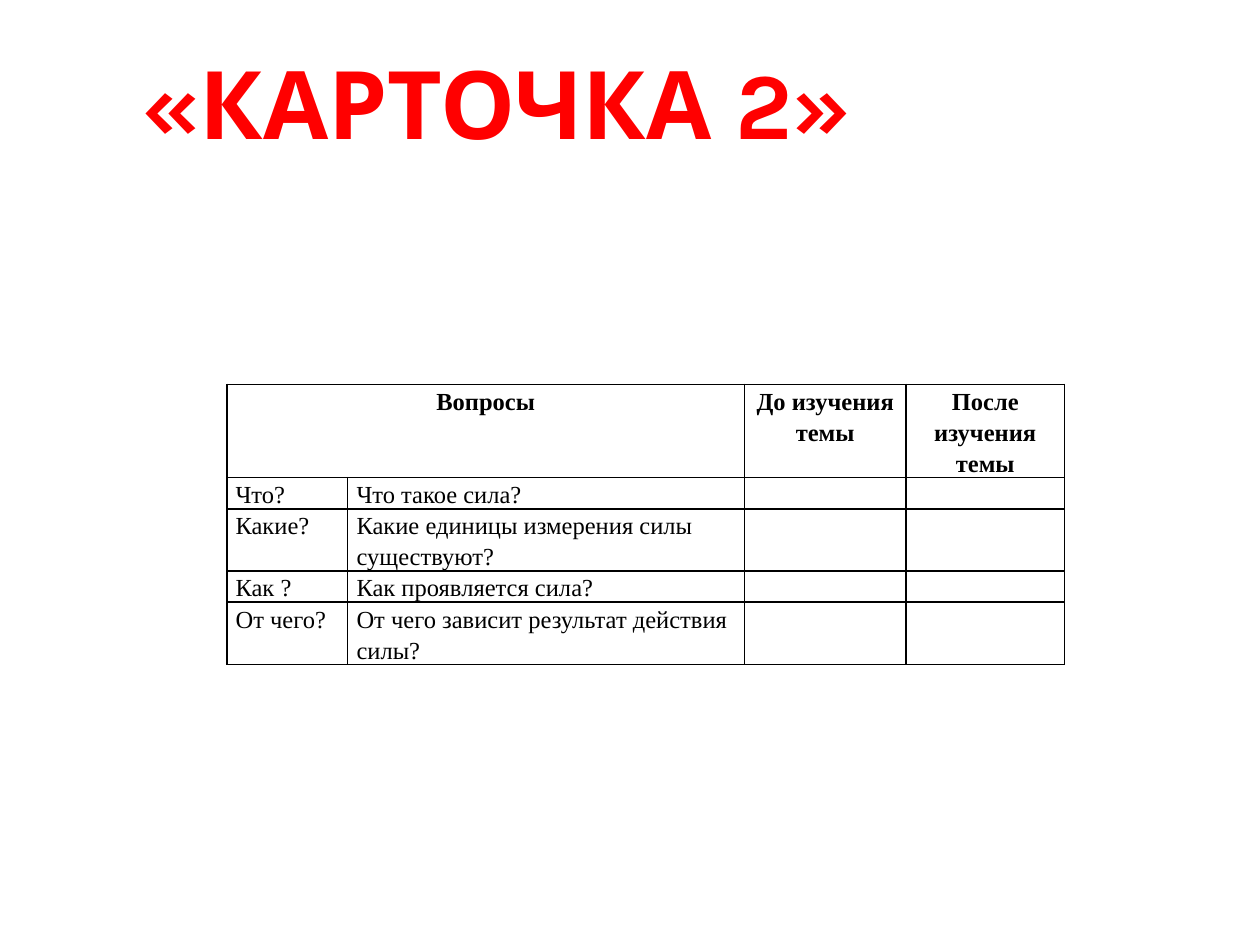
from lxml import etree
from pptx import Presentation
from pptx import util as u
from pptx.dml.color import RGBColor
from pptx.enum import text
from pptx.oxml.ns import qn

THEME = {
    "title": {"font": "Karla", "size": 54, "color": "FF0000"},
    "table": {"font": "Times New Roman", "size": 14, "color": "000000"},
    "border": {"width": 1, "color": "000000"},
}


def style(paragraph, role, bold):
    look = THEME[role]
    paragraph.font.name = look["font"]
    paragraph.font.size = u.Pt(look["size"])
    paragraph.font.bold = bold
    paragraph.font.color.rgb = RGBColor.from_string(look["color"])


def add_borders(cell):
    props = cell._tc.get_or_add_tcPr()
    for position, side in enumerate(("a:lnL", "a:lnR", "a:lnT", "a:lnB")):
        line = etree.Element(qn(side), w=str(u.Pt(THEME["border"]["width"])))
        fill = etree.SubElement(line, qn("a:solidFill"))
        etree.SubElement(fill, qn("a:srgbClr"), val=THEME["border"]["color"])
        props.insert(position, line)


prs = Presentation()
prs.slide_width, prs.slide_height = u.Inches(10), u.Inches(7.5)
slide = prs.slides.add_slide(prs.slide_layouts[5])

# Title
heading = slide.shapes.title
heading.left, heading.top = u.Inches(1.02), u.Inches(0.31)
heading.width, heading.height = u.Inches(8.59), u.Inches(1.17)
heading.text_frame.text = "«КАРТОЧКА 2»"
heading.text_frame.vertical_anchor = text.MSO_ANCHOR.TOP
heading.text_frame.paragraphs[0].alignment = text.PP_ALIGN.LEFT
style(heading.text_frame.paragraphs[0], "title", True)

# Question card: text lines per row set the row heights
questions = [
    ("Вопросы", "", "До изучения темы", "После изучения темы"),
    ("Что?", "Что такое сила?", "", ""),
    ("Какие?", "Какие единицы измерения силы существуют?", "", ""),
    ("Как ?", "Как проявляется сила?", "", ""),
    ("От чего?", "От чего зависит результат действия силы?", "", ""),
]
column_widths = [0.96, 3.15, 1.28, 1.26]
row_lines = [3, 1, 2, 1, 2]
line_height = 0.246

card = slide.shapes.add_table(
    len(questions), len(column_widths), u.Inches(1.8), u.Inches(3.05),
    u.Inches(sum(column_widths)), u.Inches(sum(row_lines) * line_height)).table
for column, width in zip(card.columns, column_widths):
    column.width = u.Inches(width)
for row, lines in zip(card.rows, row_lines):
    row.height = u.Inches(lines * line_height)
card.cell(0, 0).merge(card.cell(0, 1))

for r, entries in enumerate(questions):
    for c, entry in enumerate(entries):
        cell = card.cell(r, c)
        cell.margin_left = cell.margin_right = u.Inches(0.07)
        cell.margin_top = cell.margin_bottom = 0
        cell.fill.background()
        add_borders(cell)
        paragraph = cell.text_frame.paragraphs[0]
        paragraph.line_spacing = 1.15
        paragraph.alignment = text.PP_ALIGN.LEFT if r else text.PP_ALIGN.CENTER
        style(paragraph, "table", r == 0)
        if entry:
            paragraph.add_run().text = entry
        else:  # keeps empty cells as low as the filled ones
            etree.SubElement(paragraph._p, qn("a:endParaRPr"),
                             sz=str(THEME["table"]["size"] * 100))

prs.save("out.pptx")
